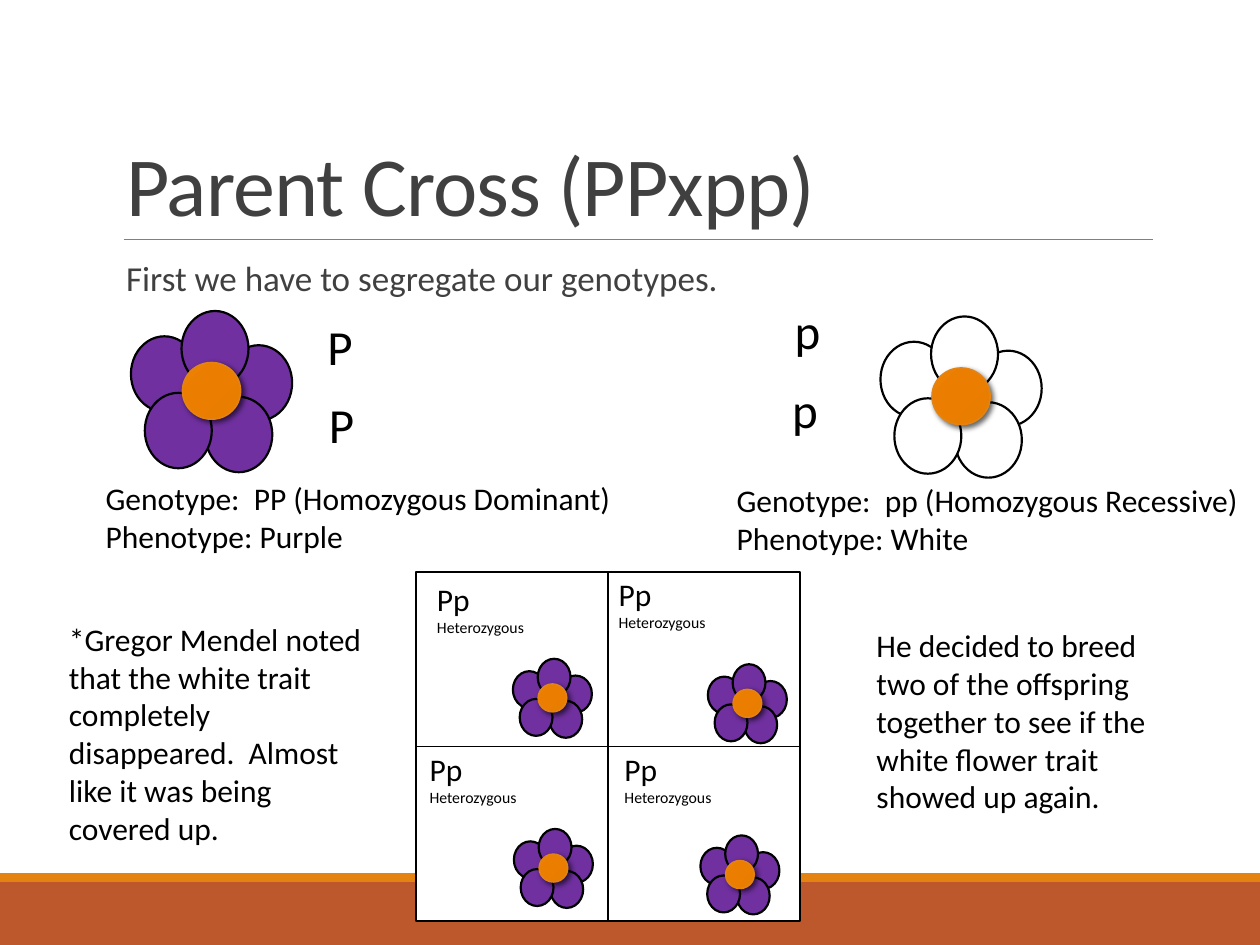
from dataclasses import dataclass

from lxml.etree import SubElement
from pptx import Presentation
from pptx.dml.color import RGBColor
from pptx.enum.shapes import MSO_CONNECTOR, MSO_SHAPE
from pptx.enum.text import MSO_ANCHOR, MSO_AUTO_SIZE, PP_ALIGN
from pptx.oxml.ns import qn
from pptx.util import Cm, Pt

FONT = "Calibri"
BLACK, WHITE, PURPLE, ORANGE = "000000", "FFFFFF", "7030A0", "E48312"
PETAL_OFFSETS = [(0, 0.51), (1.9, 0.69), (1.5, 1.73), (0.28, 1.65), (1.02, 0)]
PETAL_SIZE = (1.35, 1.52)
CENTER_OFFSET = 1.04
CENTER_SIZE = (1.17, 1.14)
CENTER_STOPS = [(0, "E57B00"), (34, "E87D00"), (70, "EB7E00"), (100, "EF8407")]


@dataclass
class Flower:
    """A five-petalled flower, placed in centimetres."""
    left: float
    top: float
    color: str = PURPLE
    scale: float = 1


@dataclass
class Label:
    """A text box whose lines each have their own size in points."""
    left: float
    top: float
    width: float
    height: float
    text: str
    sizes: tuple = (18,)


PARENTS = [Flower(2.64, 6.27), Flower(17.75, 6.38, WHITE)]
OFFSPRING = [Flower(left, top, PURPLE, 0.49) for left, top in
             [(10.34, 13.28), (14.27, 13.39), (10.36, 16.71), (14.12, 16.84)]]

GENOTYPES = [
    Label(1.88, 9.53, 11.38, 1.8,
          "Genotype:  PP (Homozygous Dominant)\nPhenotype: Purple", (18, 18)),
    Label(14.6, 9.58, 10.8, 1.8,
          "Genotype:  pp (Homozygous Recessive)\nPhenotype: White", (18, 18)),
]
ALLELES = [Label(left, top, 0.99, 1.45, letter, (28,)) for left, top, letter in
           [(6.35, 6.25, "P"), (15.77, 5.94, "p"), (6.38, 7.82, "P"), (15.72, 7.52, "p")]]
CROSSES = [Label(left, top, 2.39, 1.42, "Pp\nHeterozygous", (18, 9)) for left, top in
           [(8.56, 11.56), (12.22, 11.46), (8.41, 14.99), (12.34, 14.99)]]
NOTES = [
    Label(1.14, 12.37, 6.4, 4.88,
          "*Gregor Mendel noted that the white trait completely disappeared.  "
          "Almost like it was being covered up."),
    Label(17.42, 12.5, 6.4, 4.11,
          "He decided to breed two of the offspring together to see if the "
          "white flower trait showed up again."),
]


def rgb(color: str) -> RGBColor:
    """Turn a hex string into a colour."""
    return RGBColor.from_string(color)


def add_filled(shapes, kind, left: float, top: float, width: float, height: float,
               fill: str, line: str = "", line_width: float = 1.25):
    """Draw a flat preset shape, outlined only if a line colour is given."""
    shape = shapes.add_shape(kind, Cm(left), Cm(top), Cm(width), Cm(height))
    shape.shadow.inherit = False
    shape.fill.solid()
    shape.fill.fore_color.rgb = rgb(fill)
    if line:
        shape.line.color.rgb = rgb(line)
        shape.line.width = Pt(line_width)
    else:
        shape.line.fill.background()
    return shape


def add_line(shapes, start: tuple, end: tuple, color: str, width: float) -> None:
    """Draw a straight line without a shadow."""
    line = shapes.add_connector(MSO_CONNECTOR.STRAIGHT, *map(Cm, start + end))
    line.line.color.rgb = rgb(color)
    line.line.width = Pt(width)
    SubElement(line._element.spPr, qn("a:effectLst"))


def shade_center(shape) -> None:
    """Give a flower centre its radial gradient and soft shadow."""
    properties = shape._element.spPr
    shape.fill.gradient()
    gradient = properties.find(qn("a:gradFill"))
    for child in list(gradient):
        gradient.remove(child)
    stops = SubElement(gradient, qn("a:gsLst"))
    for position, color in CENTER_STOPS:
        stop = SubElement(stops, qn("a:gs"), pos=str(position * 1000))
        SubElement(stop, qn("a:srgbClr"), val=color)
    circle = SubElement(gradient, qn("a:path"), {"path": "circle"})
    SubElement(circle, qn("a:fillToRect"), l="100000", t="100000", r="0", b="0")
    shadow = SubElement(properties.find(qn("a:effectLst")), qn("a:outerShdw"),
                        blurRad=str(Pt(3)), dist=str(Pt(2)), dir="2700000", rotWithShape="0")
    shadow_color = SubElement(shadow, qn("a:srgbClr"), val=BLACK)
    SubElement(shadow_color, qn("a:alpha"), val="60000")


def add_flower(slide, flower: Flower) -> None:
    """Draw five petals and a centre as one group."""
    shapes = slide.shapes.add_group_shape().shapes
    width, height = (flower.scale * length for length in PETAL_SIZE)
    for x, y in PETAL_OFFSETS:
        add_filled(shapes, MSO_SHAPE.OVAL, flower.left + x * flower.scale,
                   flower.top + y * flower.scale, width, height, flower.color, BLACK)
    offset = CENTER_OFFSET * flower.scale
    width, height = (flower.scale * length for length in CENTER_SIZE)
    center = add_filled(shapes, MSO_SHAPE.OVAL, flower.left + offset, flower.top + offset,
                        width, height, ORANGE, ORANGE, 1)
    shade_center(center)


def format_paragraph(paragraph, size: float, color: str) -> None:
    """Set the font of every run in a paragraph."""
    for run in paragraph.runs:
        run.font.name = FONT
        run.font.size = Pt(size)
        run.font.color.rgb = rgb(color)


def add_label(slide, label: Label) -> None:
    """Write a wrapped text box."""
    box = slide.shapes.add_textbox(Cm(label.left), Cm(label.top),
                                   Cm(label.width), Cm(label.height))
    box.text_frame.word_wrap = True
    box.text_frame.auto_size = MSO_AUTO_SIZE.SHAPE_TO_FIT_TEXT
    box.text_frame.text = label.text
    for paragraph, size in zip(box.text_frame.paragraphs, label.sizes):
        format_paragraph(paragraph, size, BLACK)


def fill_placeholder(shape, text: str, top: float, height: float, size: float,
                     spacing: float, anchor):
    """Place a placeholder, write its text and return the paragraph."""
    shape.left, shape.top, shape.width, shape.height = map(Cm, (2.29, top, 20.96, height))
    frame = shape.text_frame
    frame.text = text
    frame.auto_size = MSO_AUTO_SIZE.NONE
    frame.vertical_anchor = anchor
    paragraph = frame.paragraphs[0]
    paragraph.alignment = PP_ALIGN.LEFT
    paragraph.line_spacing = spacing
    format_paragraph(paragraph, size, "404040")
    return paragraph


def add_heading(slide) -> None:
    """Fill the title and the introductory line."""
    title, body = slide.placeholders
    paragraph = fill_placeholder(title, "Parent Cross (PPxpp)", 0.79, 4.04, 48, 0.85,
                                 MSO_ANCHOR.BOTTOM)
    paragraph.runs[0]._r.get_or_add_rPr().set("spc", "-50")
    paragraph = fill_placeholder(body, "First we have to segregate our genotypes.",
                                 5.13, 11.18, 20, 0.9, MSO_ANCHOR.TOP)
    body.text_frame.margin_left = body.text_frame.margin_right = 0
    paragraph.space_before, paragraph.space_after = Pt(12), Pt(2)
    properties = paragraph._p.get_or_add_pPr()
    properties.set("marL", str(Cm(0.25)))
    properties.set("indent", str(Cm(-0.25)))
    SubElement(SubElement(properties, qn("a:buClr")), qn("a:srgbClr"), val=ORANGE)
    SubElement(properties, qn("a:buChar"), char=" ")


def add_punnett_square(slide, left: float, top: float, width: float, height: float) -> None:
    """Draw a box divided into four cells."""
    shapes = slide.shapes.add_group_shape().shapes
    add_filled(shapes, MSO_SHAPE.RECTANGLE, left, top, width, height, WHITE, BLACK)
    middle, center = left + width / 2, top + height / 2
    add_line(shapes, (middle, top), (middle, top + height), BLACK, 1)
    add_line(shapes, (left, center), (left + width, center), BLACK, 1)


def main() -> None:
    """Build the slide and save it."""
    presentation = Presentation()
    presentation.slide_width, presentation.slide_height = Cm(25.4), Cm(19.05)
    slide = presentation.slides.add_slide(presentation.slide_layouts[1])
    add_filled(slide.shapes, MSO_SHAPE.RECTANGLE, 0, 17.78, 25.4, 1.27, "BD582C")
    add_filled(slide.shapes, MSO_SHAPE.RECTANGLE, 0, 17.6, 25.4, 0.18, ORANGE)
    add_line(slide.shapes, (2.49, 4.83), (23.24, 4.83), "808080", 0.5)
    add_heading(slide)
    add_punnett_square(slide, 8.38, 11.53, 7.75, 7.04)
    for flower in PARENTS + OFFSPRING:
        add_flower(slide, flower)
    for label in GENOTYPES + ALLELES + CROSSES + NOTES:
        add_label(slide, label)
    presentation.save("out.pptx")


if __name__ == "__main__":
    main()
